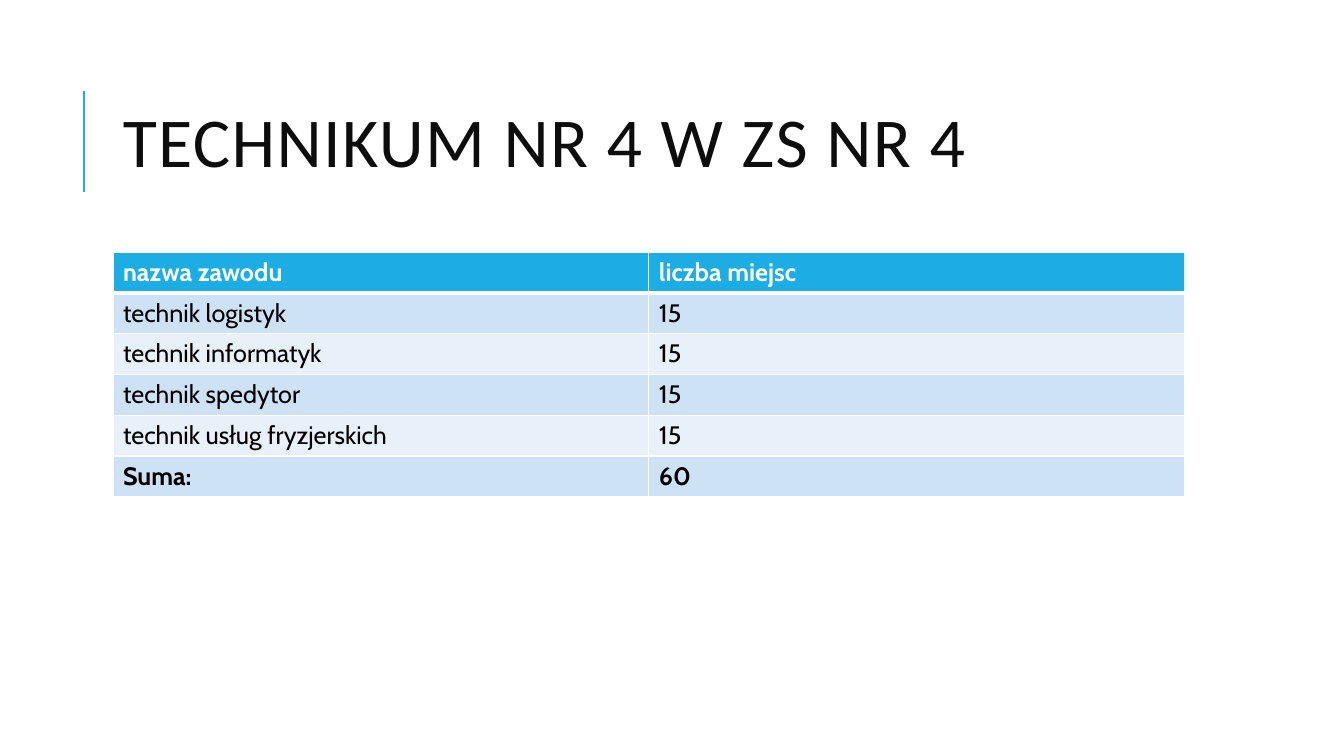
from lxml.etree import SubElement as Sub
from pptx import Presentation
from pptx.dml.color import RGBColor as Rgb
from pptx.enum.shapes import MSO_CONNECTOR as Link
from pptx.enum.text import MSO_ANCHOR as Anchor
from pptx.oxml.ns import qn
from pptx.util import Inches, Pt

COLORS = {
    "accent": "1CADE4",
    "title": "0D0D0D",
    "text": "000000",
    "white": "FFFFFF",
    "dark": "CDE3F5",
    "light": "E8F1FA",
}
ROWS = [
    ("nazwa zawodu", "liczba miejsc"),
    ("technik logistyk", "15"),
    ("technik informatyk", "15"),
    ("technik spedytor", "15"),
    ("technik usług fryzjerskich", "15"),
    ("Suma:", "60"),
]


def color(name):
    return Rgb.from_string(COLORS[name])


def write(frame, text, font="Cabin", size=18, tint="text", bold=False,
          track=0, lead=None):
    para = frame.paragraphs[0]
    para.line_spacing = lead
    run = para.add_run()
    run.text = text
    run.font.name = font
    run.font.size = Pt(size)
    run.font.bold = bold
    run.font.color.rgb = color(tint)
    if track:
        run.font._element.set("spc", str(track * 100))


def edge(cell, side, width):
    props = cell._tc.get_or_add_tcPr()
    line = Sub(props, qn(f"a:ln{side}"), w=str(Pt(width)))
    fill = Sub(line, qn("a:solidFill"))
    Sub(fill, qn("a:srgbClr"), val=COLORS["white"])


def add_rule(slide, x, top, end):
    rule = slide.shapes.add_connector(
        Link.STRAIGHT, Inches(x), Inches(end), Inches(x), Inches(top))
    rule.line.color.rgb = color("accent")
    rule.line.width = Pt(1.5)
    Sub(rule._element.spPr, qn("a:effectLst"))


def add_title(slide, text, x, y, w, h):
    # Accent rule to the left of the heading
    add_rule(slide, x - 0.29, y + 0.26, y + 1.26)

    # Heading
    box = slide.shapes.add_textbox(Inches(x), Inches(y), Inches(w), Inches(h))
    frame = box.text_frame
    frame.word_wrap = True
    frame.vertical_anchor = Anchor.MIDDLE
    write(frame, text, font="Calibri", size=50, tint="title", track=1,
          lead=0.8)


def add_grid(slide, rows, x, y, w, h):
    table = slide.shapes.add_table(
        len(rows), len(rows[0]),
        Inches(x), Inches(y), Inches(w), Inches(h)).table
    last = len(rows) - 1
    for r, row in enumerate(rows):
        table.rows[r].height = Inches(h / len(rows))
        head = r == 0
        shade = "accent" if head else "dark" if r % 2 else "light"
        for c, text in enumerate(row):
            cell = table.cell(r, c)
            # Thick border between the header and the body
            widths = {"L": 1, "R": 1, "T": 3 if r == 1 else 1,
                      "B": 3 if head else 1}
            for side, width in widths.items():
                edge(cell, side, width)
            cell.fill.solid()
            cell.fill.fore_color.rgb = color(shade)
            write(cell.text_frame, text, tint="white" if head else "text",
                  bold=r in (0, last))


def main():
    deck = Presentation()
    deck.slide_width = Inches(13.33)
    deck.slide_height = Inches(7.5)
    slide = deck.slides.add_slide(deck.slide_layouts[6])

    # Title and table share their left edge and width
    left, width = 1.12, 10.63
    add_title(slide, "TECHNIKUM NR 4 W ZS NR 4", left, 0.64, width, 1.64)
    add_grid(slide, ROWS, left, 2.5, width, 2.43)
    deck.save("out.pptx")


if __name__ == "__main__":
    main()
